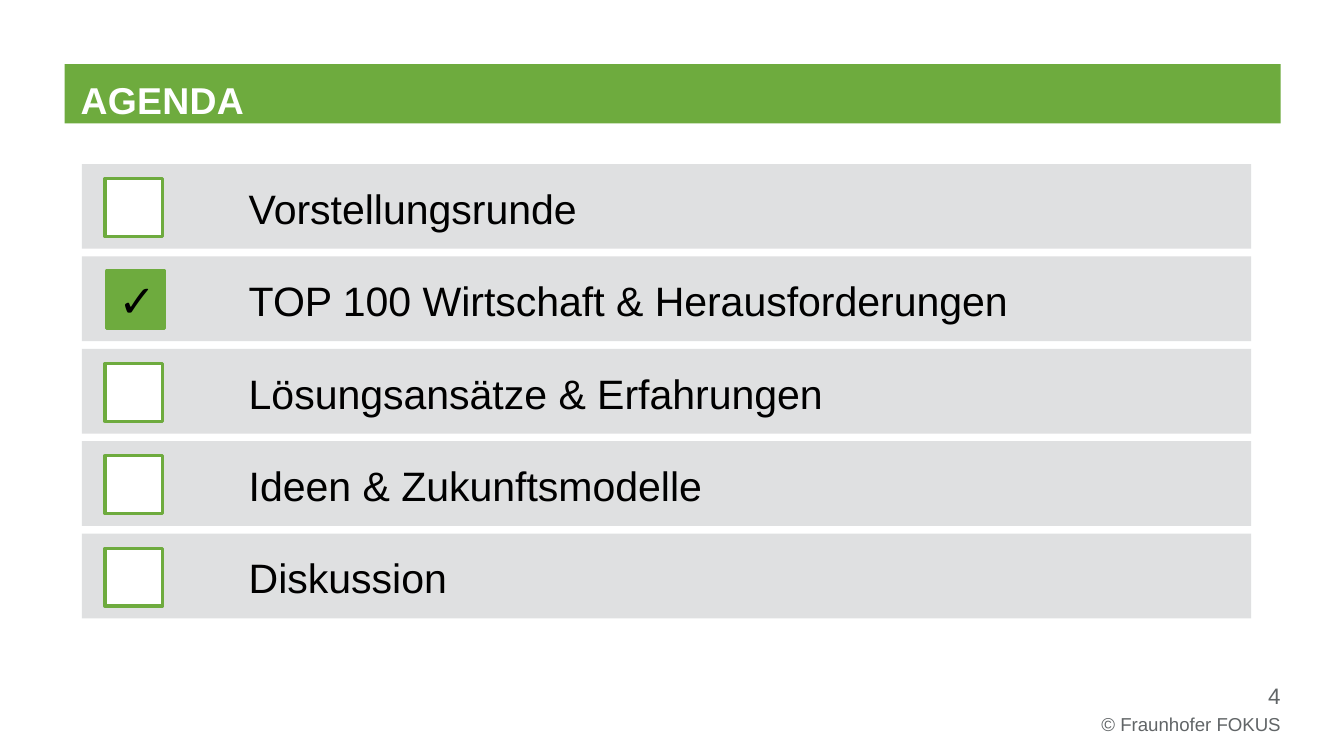
import pptx
import pptx.util
import pptx.dml.color
import pptx.enum.shapes
import pptx.enum.text

Pt = pptx.util.Pt
ALIGN = pptx.enum.text.PP_ALIGN
ANCHOR = pptx.enum.text.MSO_ANCHOR

TITLE = "AGENDA"
AGENDA = [
    ("Vorstellungsrunde", False),
    ("TOP 100 Wirtschaft & Herausforderungen", True),
    ("Lösungsansätze & Erfahrungen", False),
    ("Ideen & Zukunftsmodelle", False),
    ("Diskussion", False),
]
CHECK_MARK = "✓"
FOOTER = [("4", 12, 365, 15), ("© Fraunhofer FOKUS", 10, 381, 13.5)]
COLORS = {
    "green": "6EAB3E",
    "bar": "DFE0E1",
    "white": "FFFFFF",
    "black": "000000",
    "footer": "616567",
}
FIRST_TOP, ROW_PITCH = 87.9, 49.5
BAR_LEFT, BAR_WIDTH, BAR_HEIGHT = 43.9, 626.4, 45.4
BOX_LEFT, BOX_SIZE = 56.2, 31


def color(name):
    return pptx.dml.color.RGBColor.from_string(COLORS[name])


def set_text(shape, text, size, ink, align=ALIGN.LEFT, anchor=ANCHOR.MIDDLE,
             inset=0, spacing=None, wrap=True):
    frame = shape.text_frame
    frame.word_wrap = wrap
    frame.auto_size = pptx.enum.text.MSO_AUTO_SIZE.NONE
    frame.vertical_anchor = anchor
    frame.margin_left = Pt(inset)
    frame.margin_top = frame.margin_right = frame.margin_bottom = 0
    paragraph = frame.paragraphs[0]
    paragraph.alignment = align
    paragraph.space_before = Pt(0)
    if spacing:
        paragraph.line_spacing = Pt(spacing)
    run = paragraph.add_run()
    run.text = text
    run.font.name = "Arial"
    run.font.size = Pt(size)
    run.font.color.rgb = color(ink)
    return run


def add_text(slide, left, top, width, height, *content, **layout):
    label = slide.shapes.add_textbox(Pt(left), Pt(top), Pt(width), Pt(height))
    set_text(label, *content, **layout)


def add_rectangle(slide, left, top, width, height, fill, outline=None):
    rectangle = slide.shapes.add_shape(
        pptx.enum.shapes.MSO_SHAPE.RECTANGLE, Pt(left), Pt(top), Pt(width), Pt(height))
    rectangle.shadow.inherit = False
    rectangle.fill.solid()
    rectangle.fill.fore_color.rgb = color(fill)
    if outline:
        rectangle.line.color.rgb = color(outline)
        rectangle.line.width = Pt(1.75)
    else:
        rectangle.line.fill.background()


def add_title(slide):
    title = slide.shapes.title
    title.left, title.top, title.width, title.height = Pt(34.6), Pt(34.3), Pt(651.4), Pt(31.9)
    title.fill.solid()
    title.fill.fore_color.rgb = color("green")
    run = set_text(title, TITLE, 20, "white", inset=8.64, spacing=30)
    run.font.bold = True
    run.font._element.set("spc", "10")


def add_agenda_row(slide, index, topic, checked):
    top = FIRST_TOP + index * ROW_PITCH
    add_rectangle(slide, BAR_LEFT, top, BAR_WIDTH, BAR_HEIGHT, "bar")
    add_rectangle(slide, BOX_LEFT + checked, top + 7.8, BOX_SIZE, BOX_SIZE,
                  "green" if checked else "white", "green")
    if checked:
        add_text(slide, 51.1, top + 9.5, 36.7, 32.4, CHECK_MARK, 24, "black",
                 anchor=ANCHOR.TOP, inset=12.24, spacing=28, wrap=False)
    add_text(slide, 121, top, 500, BAR_HEIGHT, topic, 22, "black",
             inset=12.24, spacing=28, wrap=False)


def main():
    """Build the agenda slide with its checklist and footer."""
    deck = pptx.Presentation()
    deck.slide_width, deck.slide_height = Pt(720), Pt(405)
    slide = deck.slides.add_slide(deck.slide_layouts.get_by_name("Title Only"))
    add_title(slide)
    for index, (topic, checked) in enumerate(AGENDA):
        add_agenda_row(slide, index, topic, checked)
    for text, size, top, height in FOOTER:
        add_text(slide, 34, top, 652, height, text, size, "footer", align=ALIGN.RIGHT)
    deck.save("out.pptx")


if __name__ == "__main__":
    main()
